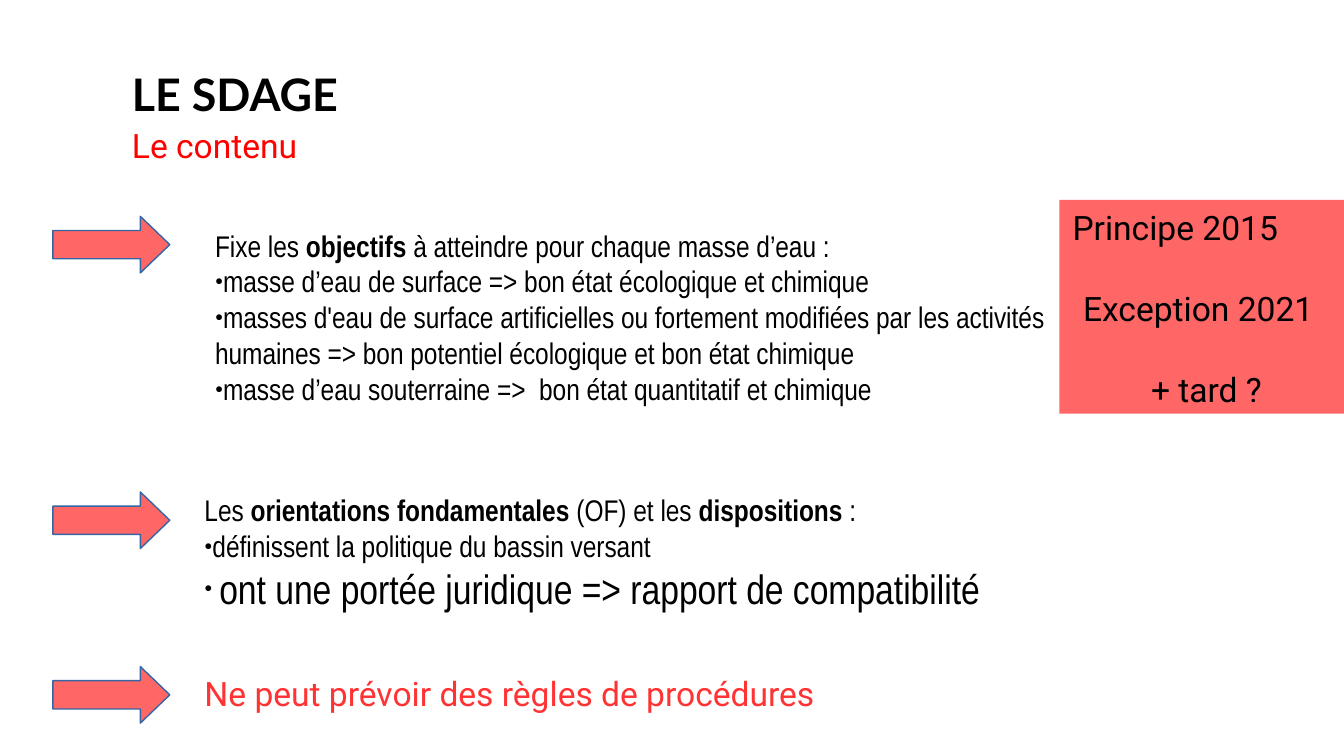
"""Build the slide on the content of the SDAGE."""
from lxml import etree
from pptx import Presentation
from pptx.dml.color import RGBColor
from pptx.enum.shapes import MSO_SHAPE
from pptx.enum.text import MSO_ANCHOR, MSO_AUTO_SIZE, PP_ALIGN
from pptx.oxml.ns import qn
from pptx.util import Cm, Pt

BLACK = RGBColor(0x00, 0x00, 0x00)
RED = RGBColor(0xFF, 0x00, 0x00)
WARNING_RED = RGBColor(0xFF, 0x33, 0x33)
CORAL = RGBColor(0xFF, 0x66, 0x66)
BLUE = RGBColor(0x34, 0x65, 0xA4)

LEFT, CENTER = PP_ALIGN.LEFT, PP_ALIGN.CENTER
TOP, MIDDLE = MSO_ANCHOR.TOP, MSO_ANCHOR.MIDDLE
NO_AUTOFIT = MSO_AUTO_SIZE.NONE
RECTANGLE, RIGHT_ARROW = MSO_SHAPE.RECTANGLE, MSO_SHAPE.RIGHT_ARROW

COMPARISON_LAYOUT = 4
ARROW_TOPS = (4.09, 9.3, 12.6)

TITLE_FONT = {"name": "Lato", "size": Pt(24), "bold": True}
ROBOTO_FONT = {"name": "Roboto", "size": Pt(18), "bold": False}
LIST_FONT = {"name": "Arial Narrow", "size": Pt(16), "bold": False}
BOLD = {"bold": True}
LARGE = {"size": Pt(22)}

OBJECTIVES = [
    [("Fixe les ", {}), ("objectifs", BOLD),
     (" à atteindre pour chaque masse d’eau :", {})],
    [("masse d’eau de surface => bon état écologique et chimique", {})],
    [("masses d'eau de surface artificielles ou fortement modifiées par les activités "
      "humaines => bon potentiel écologique et bon état chimique", {})],
    [("masse d’eau souterraine =>  bon état quantitatif et chimique", {})],
]
ORIENTATIONS = [
    [("Les ", {}), ("orientations fondamentales", BOLD), (" (OF) et les ", {}),
     ("dispositions", BOLD), (" :", {})],
    [("définissent la politique du bassin versant", {})],
    [(" ", {}), ("ont une portée juridique => rapport de compatibilité", LARGE)],
]
DEADLINES = [("Principe 2015", LEFT), ("Exception 2021 ", CENTER), (" + tard ?", CENTER)]


def set_values(target, values):
    """Set each named attribute of the target."""
    for name, value in values.items():
        setattr(target, name, value)


def add_run(paragraph, text, font_values, color):
    """Add one formatted run to a paragraph."""
    run = paragraph.add_run()
    run.text = text
    set_values(run.font, font_values)
    run.font.color.rgb = color


def set_bullet(paragraph, bulleted):
    """Remove the indent and give the paragraph a small dot or no bullet."""
    properties = paragraph._p.get_or_add_pPr()
    properties.set("marL", "0")
    properties.set("indent", "0")
    if bulleted:
        etree.SubElement(properties, qn("a:buSzPct")).set("val", "45000")
        etree.SubElement(properties, qn("a:buChar")).set("char", "●")
    else:
        etree.SubElement(properties, qn("a:buNone"))


def place(placeholder, left, top, width, height, anchor=TOP):
    """Move a placeholder and return its text frame."""
    set_values(placeholder, {"left": Cm(left), "top": Cm(top),
                             "width": Cm(width), "height": Cm(height)})
    frame = placeholder.text_frame
    set_values(frame, {"word_wrap": True, "auto_size": NO_AUTOFIT,
                       "vertical_anchor": anchor})
    return frame


def write_line(frame, text, font_values, color):
    """Write a single unbulleted line."""
    paragraph = frame.paragraphs[0]
    set_values(paragraph, {"alignment": LEFT, "space_before": Pt(0)})
    set_bullet(paragraph, False)
    add_run(paragraph, text, font_values, color)


def write_list(frame, items):
    """Write an introduction followed by bulleted items."""
    for position, runs in enumerate(items):
        paragraph = frame.add_paragraph() if position else frame.paragraphs[0]
        set_values(paragraph, {"level": 3 if position else 0, "alignment": LEFT,
                               "space_before": Pt(0)})
        set_bullet(paragraph, position > 0)
        for text, emphasis in runs:
            add_run(paragraph, text, {**LIST_FONT, **emphasis}, BLACK)


def add_block(slide, kind, left, top, width, height):
    """Add a coral shape without a shadow."""
    block = slide.shapes.add_shape(kind, Cm(left), Cm(top), Cm(width), Cm(height))
    block.shadow.inherit = False
    block.fill.solid()
    block.fill.fore_color.rgb = CORAL
    return block


def add_arrow(slide, top):
    """Add an arrow that points to a statement."""
    arrow = add_block(slide, RIGHT_ARROW, 1, top, 2.21, 1.07)
    arrow.adjustments[0] = 0.5
    arrow.adjustments[1] = 0.52
    arrow.line.color.rgb = BLUE
    arrow.line.width = Pt(0)


def add_deadlines(slide):
    """Add the panel of deadlines."""
    panel = add_block(slide, RECTANGLE, 20.02, 3.78, 5.41, 4.04)
    panel.line.fill.background()
    frame = panel.text_frame
    set_values(frame, {"word_wrap": True, "vertical_anchor": TOP})
    for position, (deadline, alignment) in enumerate(DEADLINES):
        paragraph = frame.add_paragraph() if position else frame.paragraphs[0]
        set_values(paragraph, {"alignment": alignment,
                               "space_before": Pt(22 if position else 0)})
        add_run(paragraph, deadline, ROBOTO_FONT, BLACK)


def main():
    """Build and save the presentation."""
    presentation = Presentation()
    set_values(presentation, {"slide_width": Cm(25.4), "slide_height": Cm(14.29)})
    slide = presentation.slides.add_slide(presentation.slide_layouts[COMPARISON_LAYOUT])
    title, subtitle, objectives, procedures, orientations = slide.placeholders

    write_line(place(title, 2.24, 0.58, 22.86, 2.39, MIDDLE), "LE SDAGE", TITLE_FONT, BLACK)
    write_line(place(subtitle, 2.24, 2.24, 17.78, 1.37), "Le contenu", ROBOTO_FONT, RED)
    write_list(place(objectives, 3.81, 4.17, 16.61, 4.09), OBJECTIVES)
    write_list(place(orientations, 3.61, 9.17, 21.21, 2.9), ORIENTATIONS)
    write_line(place(procedures, 3.61, 12.6, 17, 0.97),
               "Ne peut prévoir des règles de procédures", ROBOTO_FONT, WARNING_RED)

    for top in ARROW_TOPS:
        add_arrow(slide, top)
    add_deadlines(slide)
    presentation.save("out.pptx")


if __name__ == "__main__":
    main()
